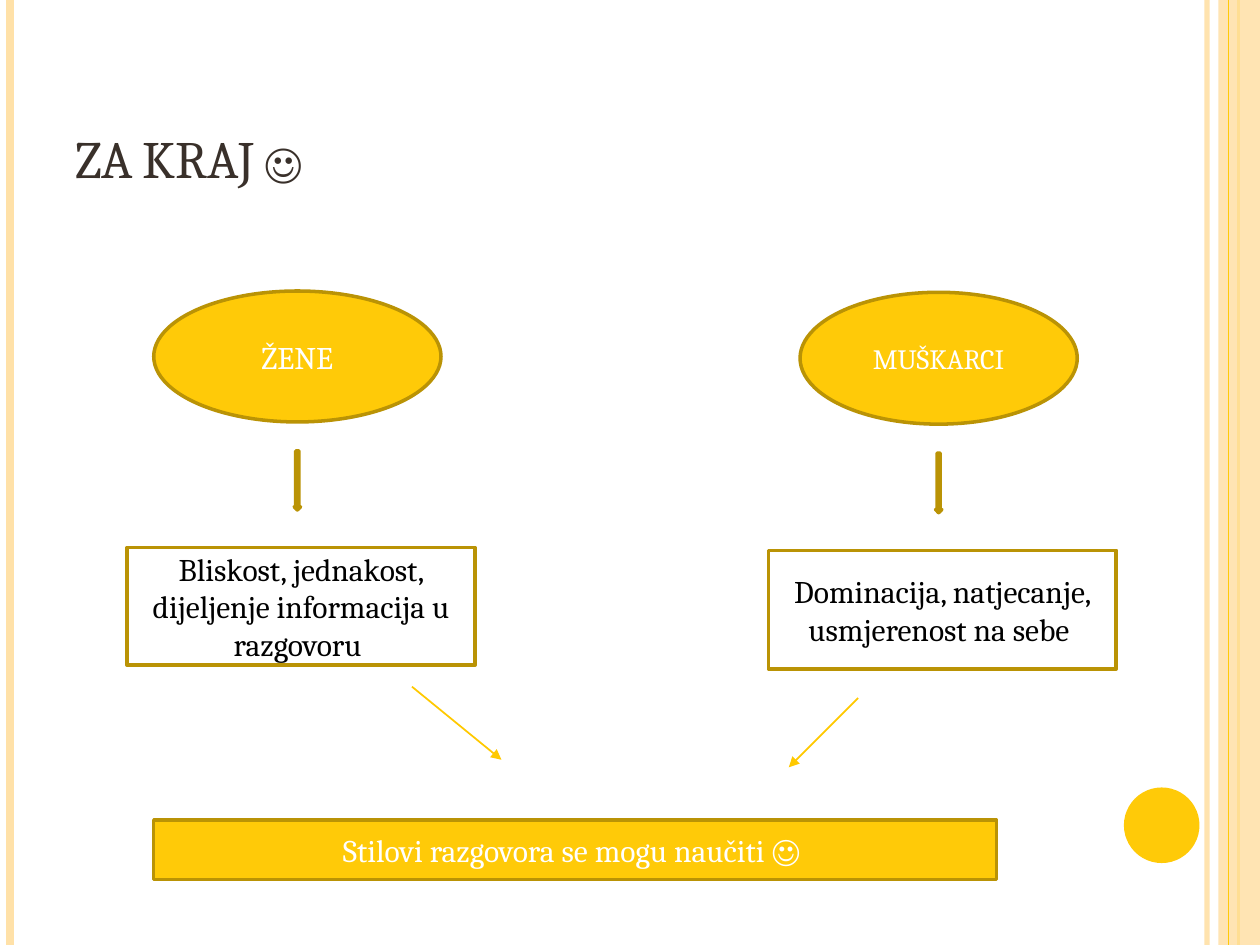
import pptx
import pptx.util
import pptx.dml.color
import pptx.enum.shapes
import pptx.enum.text
import pptx.oxml
import pptx.oxml.ns

WIDTH, HEIGHT = 10, 7.5
FONT = "Cambria"
GOLD, DARK_GOLD, CREAM, ARROW_GOLD = "FFCA08", "BA9305", "FFE1A8", "FFC900"
BLACK, WHITE, BROWN = "000000", "FFFFFF", "39302A"

KIND = pptx.enum.shapes.MSO_SHAPE
ALIGN = pptx.enum.text.PP_ALIGN
ANCHOR = pptx.enum.text.MSO_ANCHOR
inches = pptx.util.Inches


def color(value):
    return pptx.dml.color.RGBColor.from_string(value)


def add_xml(parent, tag, **attributes):
    child = pptx.oxml.parse_xml(f"<a:{tag} {pptx.oxml.ns.nsdecls('a')}/>")
    for name, value in attributes.items():
        child.set(name, str(value))
    parent.append(child)


def set_alpha(fill_owner, percent):
    """Make the solid colour inside an element partly transparent."""
    for rgb in fill_owner.iter(pptx.oxml.ns.qn("a:srgbClr")):
        add_xml(rgb, "alpha", val=percent * 1000)


def write(shape, words, size, ink, align=ALIGN.CENTER, anchor=ANCHOR.MIDDLE):
    frame = shape.text_frame
    frame.word_wrap = True
    frame.vertical_anchor = anchor
    paragraph = frame.paragraphs[0]
    paragraph.alignment = align
    run = paragraph.add_run()
    run.text = words
    run.font.name = FONT
    run.font.size = pptx.util.Pt(size)
    run.font.color.rgb = color(ink)
    return run


def add_figure(slide, kind, box, fill, outline=DARK_GOLD):
    figure = slide.shapes.add_shape(kind, *map(inches, box))
    figure.shadow.inherit = False
    figure.fill.solid()
    figure.fill.fore_color.rgb = color(fill)
    if outline:
        figure.line.color.rgb = color(outline)
        figure.line.width = pptx.util.Pt(2)
    else:
        figure.line.fill.background()
    return figure


def add_line(slide, start, end, ink, weight, arrow=False):
    line = slide.shapes.add_connector(
        pptx.enum.shapes.MSO_CONNECTOR.STRAIGHT, *map(inches, start + end))
    line.line.color.rgb = color(ink)
    line.line.width = pptx.util.Pt(weight)
    if arrow:
        add_xml(line.line._get_or_add_ln(), "tailEnd", type="triangle")
    add_xml(line._element.spPr, "effectLst")
    return line


def add_frame(slide, width, height):
    """Stripes along both edges and the dot at the lower right."""
    def stripe(x, ink, weight):
        return add_line(slide, (x, 0), (x, height), ink, weight)

    set_alpha(stripe(0.958 * width, CREAM, 3)._element, 93)
    stripe(0.008 * width, CREAM, 4.5)
    stripe(0.983 * width, GOLD, 1.5)
    band_left = 0.967 * width
    band = add_figure(slide, KIND.RECTANGLE,
                      (band_left, 0, width - band_left, height), CREAM, None)
    set_alpha(band._element.spPr, 87)
    stripe(0.975 * width, GOLD, 0.75)
    dot = 0.06 * width
    add_figure(slide, KIND.OVAL, (0.892 * width, height * 5 / 6, dot, dot), GOLD, None)


def add_title(slide, box, words):
    title = slide.shapes.add_textbox(*map(inches, box))
    run = write(title, words, 30, BROWN, ALIGN.LEFT, ANCHOR.BOTTOM)
    run.font._element.set("cap", "small")


def add_group_column(slide, box, group, group_width, group_size, traits):
    """An ellipse for the group, an arrow down, and a box with its traits."""
    left, top, width, height = box
    center = left + width / 2 - 0.03

    def centered(part_width, start, share):
        return (center - part_width / 2, top + start * height,
                part_width, share * height)

    ellipse = add_figure(slide, KIND.OVAL, centered(group_width, 0, 0.35), GOLD)
    write(ellipse, group, group_size, WHITE)
    add_figure(slide, KIND.DOWN_ARROW, centered(0.05, 0.427, 0.158), GOLD)
    traits_height = 0.315 * height
    traits_box = add_figure(
        slide, KIND.RECTANGLE,
        (left, top + height - traits_height, width, traits_height), WHITE)
    write(traits_box, traits, 18, BLACK)


def add_conclusion(slide, box, words):
    write(add_figure(slide, KIND.RECTANGLE, box, GOLD), words, 18, WHITE)


def main():
    deck = pptx.Presentation()
    deck.slide_width, deck.slide_height = inches(WIDTH), inches(HEIGHT)
    slide = deck.slides.add_slide(deck.slide_layouts[6])

    add_frame(slide, WIDTH, HEIGHT)
    add_title(slide, (0.5, 0.3, 8.17, 1.25), "ZA KRAJ ☺")
    add_group_column(slide, (1.01, 2.31, 2.76, 2.97), "ŽENE", 2.28, 18,
                     "Bliskost, jednakost, dijeljenje informacija u razgovoru ")
    add_group_column(slide, (6.1, 2.32, 2.76, 2.99), "MUŠKARCI", 2.2, 16,
                     "Dominacija, natjecanje, usmjerenost na sebe ")
    add_conclusion(slide, (1.22, 6.51, 6.69, 0.47),
                   "Stilovi razgovora se mogu naučiti ☺ ")
    for start, end in (((3.27, 5.45), (3.98, 6.03)), ((6.81, 5.54), (6.26, 6.09))):
        add_line(slide, start, end, ARROW_GOLD, 1, arrow=True)

    deck.save("out.pptx")


if __name__ == "__main__":
    main()
